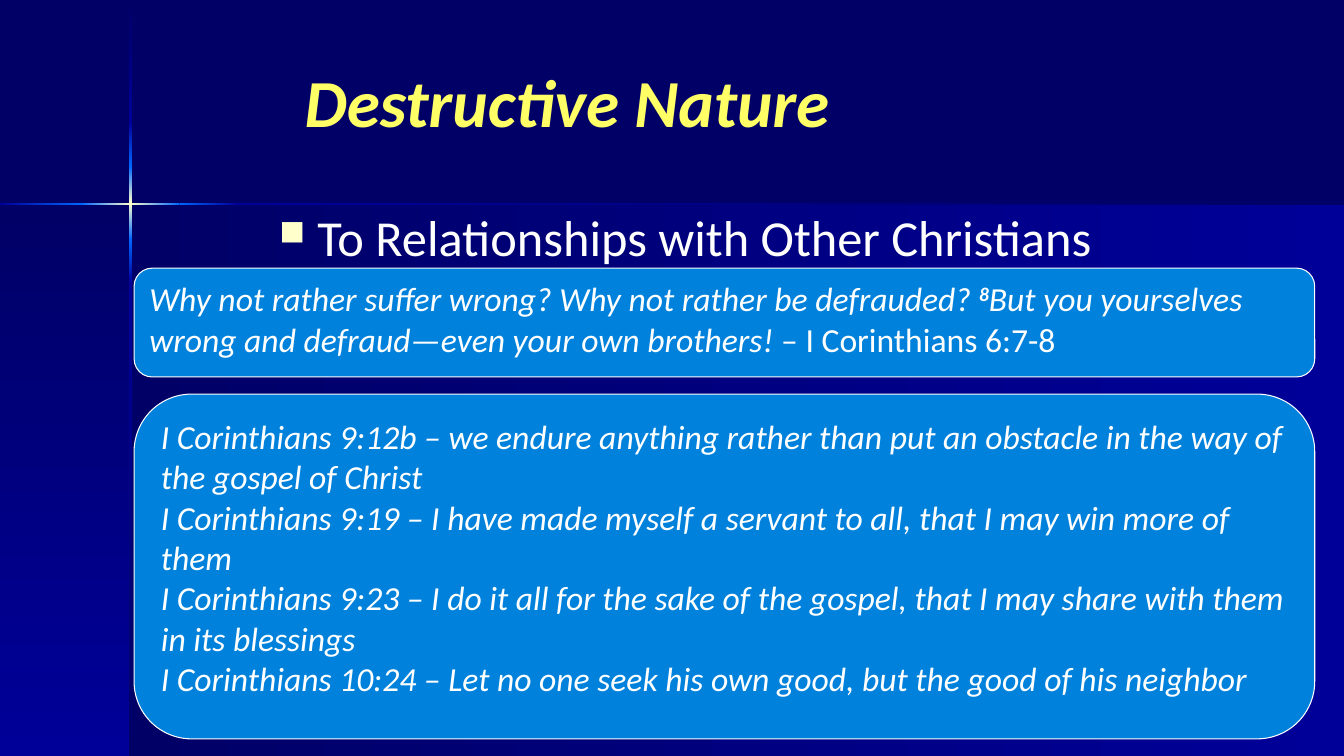
from lxml.etree import SubElement
from pptx import Presentation
from pptx.dml.color import RGBColor
from pptx.enum.shapes import MSO_SHAPE
from pptx.enum.text import MSO_ANCHOR, PP_ALIGN
from pptx.oxml.ns import qn
from pptx.util import Inches, Pt

COLORS = {
    "night": "000066",
    "navy": "000099",
    "blue": "0066FF",
    "cream": "FFFFCC",
    "yellow": "FFFF66",
    "white": "FFFFFF",
    "panel": "0082DC",
}


def add_gradient_block(page, place, angle, stops):
    block = page.shapes.add_shape(MSO_SHAPE.RECTANGLE, *[Inches(value) for value in place])
    block.shadow.inherit = False
    block.line.fill.background()
    block.fill.gradient()
    gradient = block._element.spPr.find(qn("a:gradFill"))
    for child in list(gradient):
        gradient.remove(child)
    stop_list = SubElement(gradient, qn("a:gsLst"))
    for index, name in enumerate(stops):
        position = 100000 * index // (len(stops) - 1)
        stop = SubElement(stop_list, qn("a:gs"), pos=str(position))
        SubElement(stop, qn("a:srgbClr"), val=COLORS[name])
    SubElement(gradient, qn("a:lin"), ang=str(angle * 60000), scaled="0")


def add_span(para, text, size, color="white", bold=False, italic=False):
    span = para.add_run()
    span.text = text
    span.font.name = "Calibri"
    span.font.size = Pt(size)
    span.font.bold = bold
    span.font.italic = italic
    span.font.color.rgb = RGBColor.from_string(COLORS[color])
    return span


deck = Presentation()
deck.slide_width = Inches(13.33)
deck.slide_height = Inches(7.5)
page = deck.slides.add_slide(deck.slide_layouts[5])
page.background.fill.solid()
page.background.fill.fore_color.rgb = RGBColor.from_string(COLORS["night"])

add_gradient_block(page, (1.29, 2.02, 12.04, 5.48), 0, ("night", "navy"))
add_gradient_block(page, (0, 2.02, 1.29, 5.48), 90, ("night", "navy"))

vertical_beam = [
    (0.01, 1.21, ("night", "navy")),
    (1.21, 1.65, ("navy", "blue")),
    (1.65, 2.38, ("blue", "cream", "blue")),
    (2.38, 2.82, ("blue", "navy")),
    (2.82, 7.5, ("navy", "night")),
]
for top, bottom, stops in vertical_beam:
    add_gradient_block(page, (1.28, top, 0.03, bottom - top), 90, stops)

horizontal_beam = [
    (0, 0.81, ("navy", "blue")),
    (0.81, 1.78, ("blue", "cream", "blue")),
    (1.78, 2.36, ("blue", "navy")),
    (2.36, 13.33, ("navy", "night")),
]
for left, right, stops in horizontal_beam:
    add_gradient_block(page, (left, 2.01, right - left, 0.02), 0, stops)

title = page.shapes.title
title.left, title.top = Inches(2.92), Inches(0.5)
title.width, title.height = Inches(8.25), Inches(1)
title.text_frame.vertical_anchor = MSO_ANCHOR.MIDDLE
title_para = title.text_frame.paragraphs[0]
title_para.alignment = PP_ALIGN.LEFT
add_span(title_para, "Destructive Nature", 48, "yellow", bold=True, italic=True)

topic = page.shapes.add_textbox(Inches(2.67), Inches(2), Inches(8.5), Inches(0.75))
topic.text_frame.word_wrap = True
topic_para = topic.text_frame.paragraphs[0]
add_span(topic_para, "To Relationships with Other Christians", 36)
properties = topic_para._p.get_or_add_pPr()
properties.set("marL", str(Inches(0.38)))
properties.set("indent", str(Inches(-0.38)))
bullet_color = SubElement(properties, qn("a:buClr"))
SubElement(bullet_color, qn("a:srgbClr"), val=COLORS["cream"])
SubElement(properties, qn("a:buSzPct"), val="70000")
SubElement(properties, qn("a:buChar"), char="■")

verse_boxes = [
    (2.66, 1.08, [[
        ("Why not rather suffer wrong? Why not rather be defrauded? ", "italic"),
        ("8", "superscript"),
        ("But you yourselves wrong and defraud—even your own brothers!", "italic"),
        ("\u00a0– I Corinthians 6:7-8", "plain"),
    ]]),
    (3.91, 3.42, [
        [("I Corinthians 9:12b – we endure anything rather than put an obstacle in the way of the gospel of Christ", "italic")],
        [("I Corinthians 9:19 – I have made myself a servant to all, that I may win more of them", "italic")],
        [("I Corinthians 9:23 – I do it all for the sake of the gospel, that I may share with them in its blessings", "italic")],
        [("I Corinthians 10:24 – Let no one seek his own good, but the good of his neighbor", "italic")],
    ]),
]
for top, height, verses in verse_boxes:
    box = page.shapes.add_shape(
        MSO_SHAPE.ROUNDED_RECTANGLE, Inches(1.33), Inches(top), Inches(11.71), Inches(height))
    box.shadow.inherit = False
    box.fill.solid()
    box.fill.fore_color.rgb = RGBColor.from_string(COLORS["panel"])
    box.line.color.rgb = RGBColor.from_string(COLORS["white"])
    box.line.width = Pt(0.75)
    frame = box.text_frame
    frame.word_wrap = True
    frame.vertical_anchor = MSO_ANCHOR.TOP
    for index, verse in enumerate(verses):
        para = frame.add_paragraph() if index else frame.paragraphs[0]
        para.alignment = PP_ALIGN.LEFT
        for text, style in verse:
            raised = style == "superscript"
            span = add_span(para, text, 24, bold=raised, italic=style != "plain")
            if raised:
                span.font._element.set("baseline", "30000")

deck.save("out.pptx")
